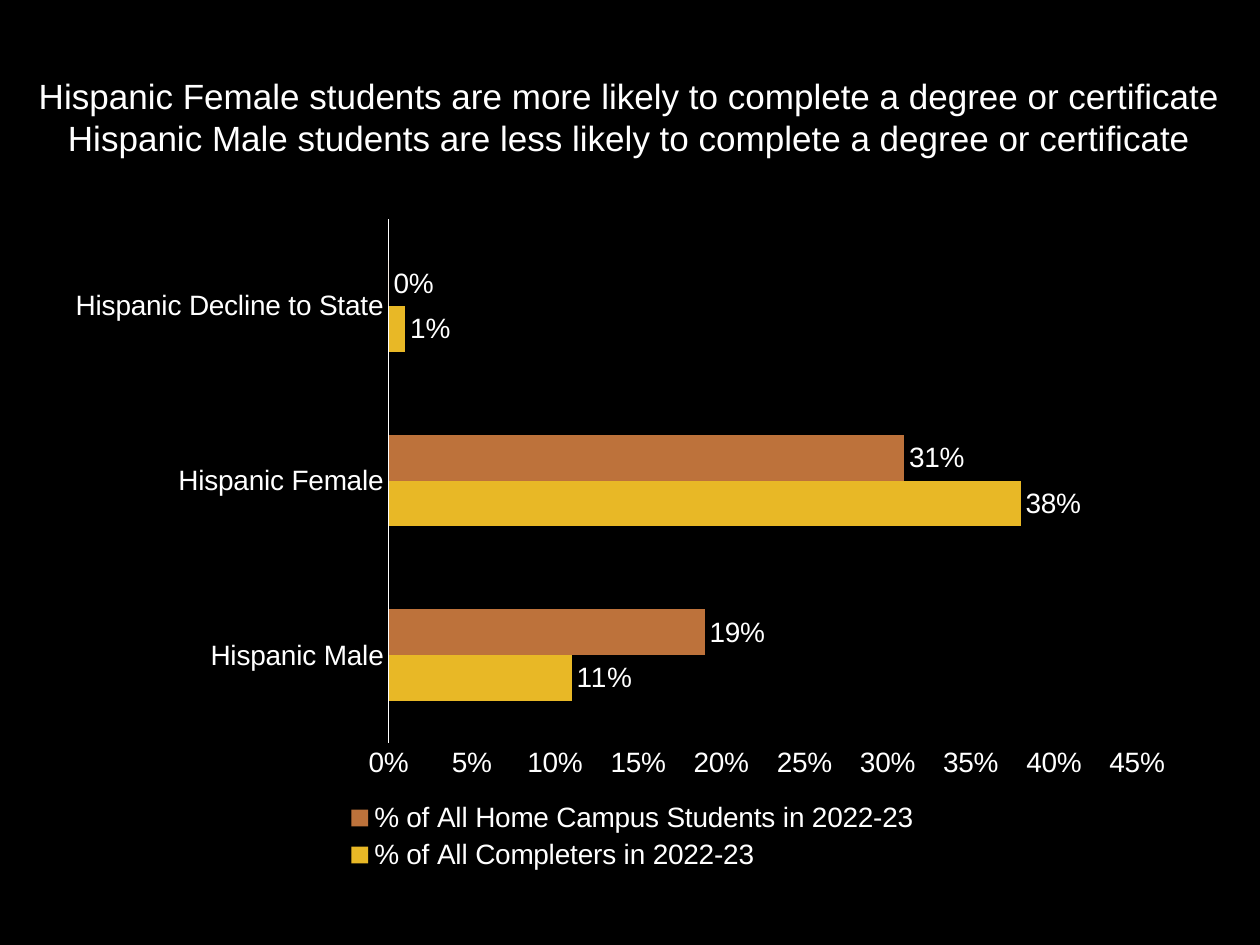
import pptx
import pptx.chart.data
import pptx.dml.color
import pptx.enum.chart
import pptx.enum.text
import pptx.oxml
import pptx.oxml.ns
import pptx.util

Inches = pptx.util.Inches
RGBColor = pptx.dml.color.RGBColor
BLACK = RGBColor(0x00, 0x00, 0x00)
WHITE = RGBColor(0xFF, 0xFF, 0xFF)
GOLD = RGBColor(0xE8, 0xB8, 0x26)
COPPER = RGBColor(0xBD, 0x72, 0x3B)

HEADLINE = (
    "Hispanic Female students are more likely to complete a degree or certificate",
    "Hispanic Male students are less likely to complete a degree or certificate",
)
GROUPS = ("Hispanic Male", "Hispanic Female", "Hispanic Decline to State")
SHARES = (
    ("% of All Completers in 2022-23", (0.11, 0.38, 0.01), GOLD),
    ("% of All Home Campus Students in 2022-23", (0.19, 0.31, 0), COPPER),
)


def format_font(font, size=16, color=WHITE, name="Arial"):
    font.size = pptx.util.Pt(size)
    font.name = name
    font.color.rgb = color


def add_text(paragraph, text, align=pptx.enum.text.PP_ALIGN.CENTER, **font_format):
    paragraph.alignment = align
    run = paragraph.add_run()
    run.text = text
    format_font(run.font, **font_format)


def set_layout(part, x, y, w, h, inner=False):
    """Fix a chart part's place, as fractions of the chart."""
    target = '<c:layoutTarget val="inner"/>' if inner else ""
    layout = pptx.oxml.parse_xml(
        f'<c:layout {pptx.oxml.ns.nsdecls("c")}><c:manualLayout>{target}'
        '<c:xMode val="edge"/><c:yMode val="edge"/>'
        f'<c:x val="{x}"/><c:y val="{y}"/><c:w val="{w}"/><c:h val="{h}"/>'
        "</c:manualLayout></c:layout>")
    for old in part.findall(pptx.oxml.ns.qn("c:layout")):
        part.remove(old)
    legend_position = part.find(pptx.oxml.ns.qn("c:legendPos"))
    if legend_position is None:
        part.insert(0, layout)
    else:
        legend_position.addnext(layout)


def place_headline(slide, left, top, width, height):
    headline = slide.shapes.title
    headline.left, headline.top = left, top
    headline.width, headline.height = width, height
    frame = headline.text_frame
    frame.word_wrap = True
    frame.vertical_anchor = pptx.enum.text.MSO_ANCHOR.MIDDLE
    for index, line in enumerate(HEADLINE):
        paragraph = frame.add_paragraph() if index else frame.paragraphs[0]
        add_text(paragraph, line, size=20)


def format_axis(axis):
    axis.has_major_gridlines = False
    axis.major_tick_mark = pptx.enum.chart.XL_TICK_MARK.NONE
    axis.minor_tick_mark = pptx.enum.chart.XL_TICK_MARK.NONE
    format_font(axis.tick_labels.font)


def place_share_chart(slide, left, top, width, height):
    data = pptx.chart.data.CategoryChartData(number_format="0%")
    data.categories = GROUPS
    for name, values, _ in SHARES:
        data.add_series(name, values)
    chart = slide.shapes.add_chart(
        pptx.enum.chart.XL_CHART_TYPE.BAR_CLUSTERED,
        left, top, width, height, data).chart
    chart.has_title = False
    format_font(chart.font)

    # Axes
    format_axis(chart.category_axis)
    group_line = chart.category_axis.format.line
    group_line.color.rgb = WHITE
    group_line.width = pptx.util.Pt(0.75)
    share_axis = chart.value_axis
    format_axis(share_axis)
    share_axis.format.line.fill.background()
    share_axis.minimum_scale, share_axis.maximum_scale = 0, 0.45
    share_axis.major_unit = 0.05
    share_axis.tick_labels.number_format = "0%"
    share_axis.tick_labels.number_format_is_linked = False

    # Bars and their labels
    bars = chart.plots[0]
    bars.gap_width = 182
    bars.overlap = 0
    bars.vary_by_categories = False
    for series, (_, _, color) in zip(bars.series, SHARES):
        series.format.fill.solid()
        series.format.fill.fore_color.rgb = color
        labels = series.data_labels
        labels.show_value = True
        labels.number_format = "0%"
        labels.number_format_is_linked = False
        labels.position = pptx.enum.chart.XL_LABEL_POSITION.OUTSIDE_END
        format_font(labels.font)

    # Legend and plot area
    chart.has_legend = True
    legend = chart.legend
    legend.position = pptx.enum.chart.XL_LEGEND_POSITION.BOTTOM
    legend.include_in_layout = False
    format_font(legend.font)
    plot_area = chart.element.chart.plotArea
    set_layout(plot_area, 0.295, 0.02, 0.66, 0.78, inner=True)
    set_layout(chart.element.chart.find(pptx.oxml.ns.qn("c:legend")),
               0.25, 0.88, 0.52, 0.12)


def main():
    deck = pptx.Presentation()
    deck.slide_width, deck.slide_height = Inches(10), Inches(7.5)
    slide = deck.slides.add_slide(deck.slide_layouts.get_by_name("Title Only"))
    slide.background.fill.solid()
    slide.background.fill.fore_color.rgb = BLACK
    place_share_chart(slide, Inches(0.43), Inches(1.63), Inches(9), Inches(5.33))
    place_headline(slide, Inches(0.19), Inches(0.54), Inches(9.61), Inches(0.77))
    deck.save("out.pptx")


if __name__ == "__main__":
    main()
